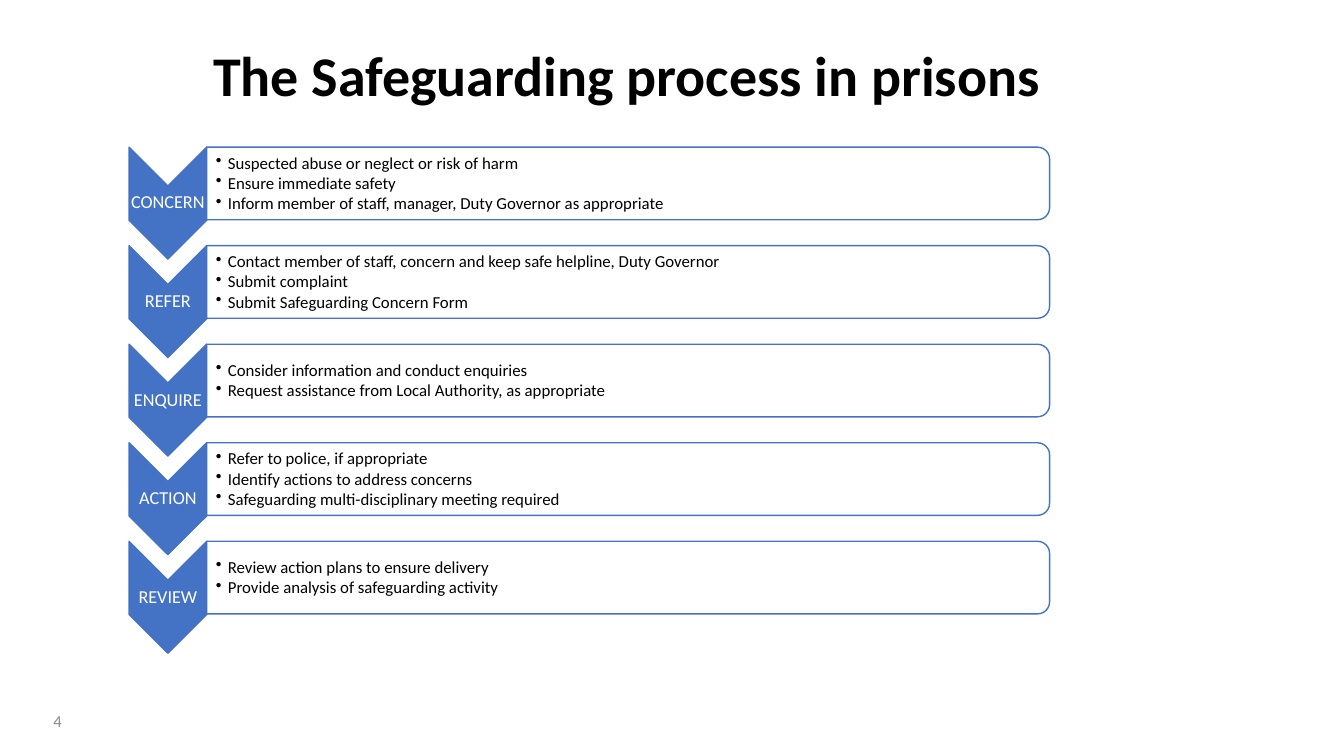
from lxml.etree import SubElement
from pptx import Presentation
from pptx.dml.color import RGBColor
from pptx.enum.shapes import MSO_SHAPE
from pptx.enum.text import MSO_ANCHOR, PP_ALIGN
from pptx.oxml.ns import qn
from pptx.util import Inches, Pt

COLORS = {"blue": "4472C4", "white": "FFFFFF", "black": "000000", "grey": "8C8C8C"}
STAGES = [
    ("CONCERN", ["Suspected abuse or neglect or risk of harm",
                 "Ensure immediate safety",
                 "Inform member of staff, manager, Duty Governor as appropriate"]),
    ("REFER", ["Contact member of staff, concern and keep safe helpline, Duty Governor",
               "Submit complaint",
               "Submit Safeguarding Concern Form"]),
    ("ENQUIRE", ["Consider information and conduct enquiries",
                 "Request assistance from Local Authority, as appropriate"]),
    ("ACTION", ["Refer to police, if appropriate",
                "Identify actions to address concerns",
                "Safeguarding multi-disciplinary meeting required"]),
    ("REVIEW", ["Review action plans to ensure delivery",
                "Provide analysis of safeguarding activity"]),
]


def color(key):
    """Return the named colour."""
    return RGBColor.from_string(COLORS[key])


def add_text(slide, box, lines, size, ink, align=PP_ALIGN.LEFT, bold=False,
             spacing=0.9, after=0, insets=(0.1, 0.05, 0.1, 0.05)):
    """Write lines centred vertically in a box and return their paragraphs."""
    frame = slide.shapes.add_textbox(*map(Inches, box)).text_frame
    frame.word_wrap = True
    frame.vertical_anchor = MSO_ANCHOR.MIDDLE
    (frame.margin_left, frame.margin_top,
     frame.margin_right, frame.margin_bottom) = map(Inches, insets)
    frame.text = "\n".join(lines)
    for paragraph in frame.paragraphs:
        paragraph.alignment = align
        paragraph.line_spacing = spacing
        paragraph.space_after = Pt(after)
        font = paragraph.font
        font.name, font.size, font.bold = "Calibri", Pt(size), bold
        font.color.rgb = color(ink)
    return frame.paragraphs


def add_turned(slide, kind, box, fill):
    """Draw a shape turned a quarter clockwise so that it covers the box."""
    left, top, width, height = box
    shift = (width - height) / 2
    shape = slide.shapes.add_shape(
        kind, *map(Inches, (left + shift, top - shift, height, width)))
    shape.rotation = 90
    shape.shadow.inherit = False
    shape.fill.solid()
    shape.fill.fore_color.rgb = color(fill)
    shape.line.color.rgb = color("blue")
    shape.line.width = Pt(1)
    return shape


def add_bullet(paragraph):
    """Give a paragraph a hanging bullet."""
    properties = paragraph._p.get_or_add_pPr()
    properties.set("marL", str(Inches(0.12)))
    properties.set("indent", str(-Inches(0.12)))
    SubElement(properties, qn("a:buChar"), char="•")


def add_stage(slide, box, name, steps):
    """Draw one stage: a down chevron with its name and a panel of steps."""
    left, top, width, height = box
    arrow_width, panel_height = 0.77, 0.72
    panel_left = left + arrow_width
    panel_width = width - arrow_width
    add_turned(slide, MSO_SHAPE.CHEVRON, (left, top, arrow_width, height), "blue")
    add_text(slide, (left, top + 0.39, arrow_width, 0.33), [name], 13, "white",
             PP_ALIGN.CENTER, insets=(0.01,) * 4)
    panel = add_turned(slide, MSO_SHAPE.ROUND_2_SAME_RECTANGLE,
                       (panel_left, top, panel_width, panel_height), "white")
    panel_color = panel._element.spPr.find(qn("a:solidFill"))[0]
    SubElement(panel_color, qn("a:alpha"), val="90000")
    for step in add_text(slide, (panel_left, top + 0.04, panel_width - 0.04, 0.65),
                         steps, 12, "black", after=1.6,
                         insets=(0.09, 0.01, 0.01, 0.01)):
        add_bullet(step)


def add_process(slide, box):
    """Stack the stages evenly in the box, each chevron nesting in the next."""
    left, top, width, height = box
    arrow_height = 1.11
    pitch = (height - arrow_height) / (len(STAGES) - 1)
    for index, (name, steps) in enumerate(STAGES):
        add_stage(slide, (left, top + index * pitch, width, arrow_height), name, steps)


def main():
    """Build and save the slide."""
    deck = Presentation()
    deck.slide_width, deck.slide_height = Inches(13.33), Inches(7.5)
    slide = deck.slides.add_slide(deck.slide_layouts[6])
    add_text(slide, (1.65, 0.5, 9.13, 0.56), ["The Safeguarding process in prisons"],
             40, "black", PP_ALIGN.CENTER, bold=True)
    add_text(slide, (0.43, 6.95, 0.85, 0.4), ["4"], 12, "grey", spacing=1.0)
    add_process(slide, (1.28, 1.46, 9.13, 5.02))
    deck.save("out.pptx")


if __name__ == "__main__":
    main()
